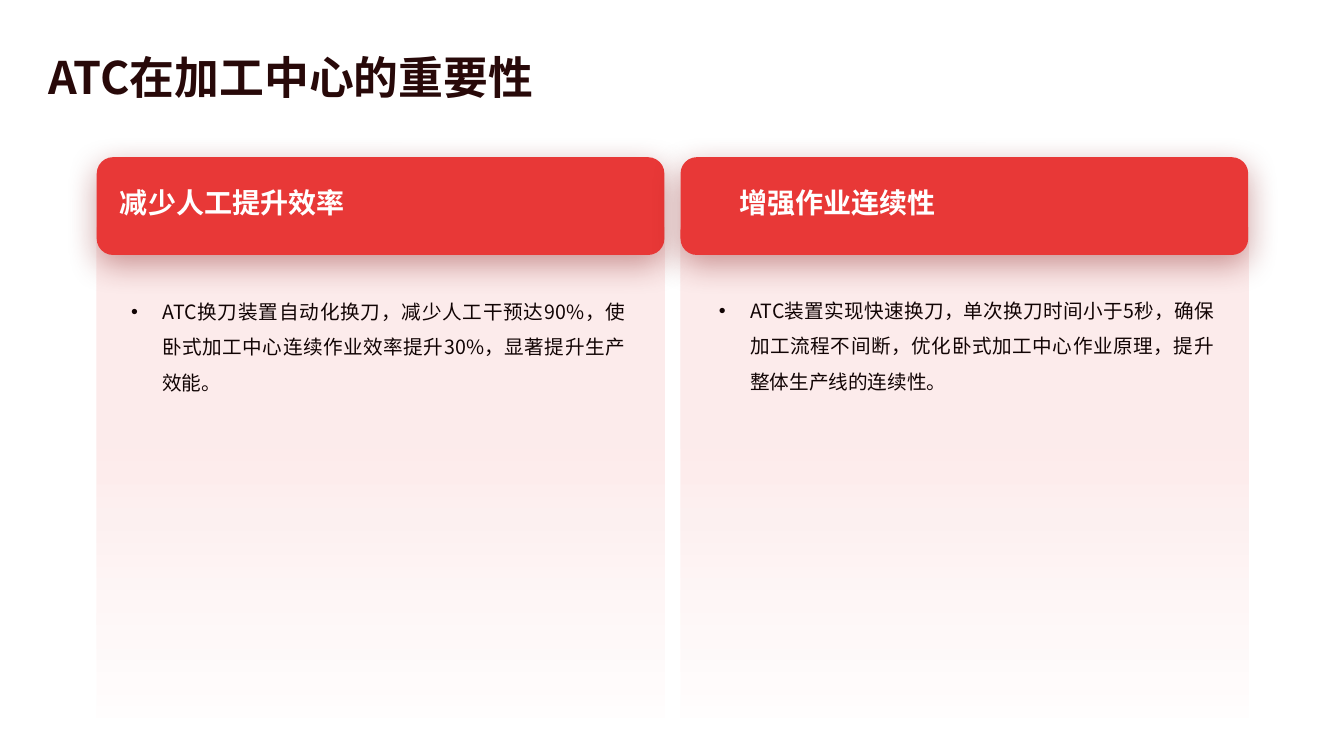
from lxml.etree import SubElement
from pptx import Presentation
from pptx.dml.color import RGBColor
from pptx.enum.lang import MSO_LANGUAGE_ID
from pptx.enum.shapes import MSO_SHAPE
from pptx.enum.text import MSO_ANCHOR, MSO_AUTO_SIZE, PP_ALIGN
from pptx.oxml.ns import qn
from pptx.util import Inches, Pt

FONT = "Noto Sans CJK SC"
COLORS = {
    "red": "E83837",
    "shade": "810F0F",
    "white": "FFFFFF",
    "title": "280909",
    "body": "110404",
}
WIDTH = 5.63
CARDS = [
    {
        "left": 0.96,
        "head": "减少人工提升效率",
        "head_box": (1.09, 1.76, 4.95, 0.5),
        "body": "ATC换刀装置自动化换刀，减少人工干预达90%，使卧式加工中心连续作业效率提升30%，显著提升生产效能。",
        "body_box": (1.2, 2.81, 5.1, 3.77),
    },
    {
        "left": 6.75,
        "head": "增强作业连续性",
        "head_box": (7.23, 1.76, 4.95, 0.5),
        "body": "ATC装置实现快速换刀，单次换刀时间小于5秒，确保加工流程不间断，优化卧式加工中心作业原理，提升整体生产线的连续性。",
        "body_box": (7.03, 2.8, 5.11, 3.77),
    },
]


def color(name):
    return RGBColor.from_string(COLORS[name])


def add_box(slide, left, top, height):
    box = slide.shapes.add_shape(
        MSO_SHAPE.ROUNDED_RECTANGLE,
        Inches(left), Inches(top), Inches(WIDTH), Inches(height),
    )
    box.shadow.inherit = False
    box.line.fill.background()
    return box


def add_panel(slide, left):
    panel = add_box(slide, left, 2.26, 4.92)
    panel.adjustments[0] = 0
    panel.fill.gradient()
    panel.fill.gradient_angle = 270
    for stop, place in zip(panel.fill.gradient_stops, (0.4, 1)):
        stop.position = place
        stop.color.rgb = color("red")
    tints = panel._element.spPr.iter(qn("a:srgbClr"))
    for tint, alpha in zip(list(tints), (10, 0)):
        SubElement(tint, qn("a:alpha"), val=str(alpha * 1000))


def add_band(slide, left):
    band = add_box(slide, left, 1.56, 0.97)
    band.fill.solid()
    band.fill.fore_color.rgb = color("red")
    effects = band._element.spPr.find(qn("a:effectLst"))
    shadow = SubElement(
        effects, qn("a:outerShdw"), blurRad=str(Pt(23)), dist=str(Pt(7)),
        dir="5400000", algn="t", rotWithShape="0",
    )
    tint = SubElement(shadow, qn("a:srgbClr"), val=COLORS["shade"])
    SubElement(tint, qn("a:alpha"), val="40000")


def set_bullet(para):
    props = para._p.get_or_add_pPr()
    indent = Inches(0.31)
    props.set("marL", str(indent))
    props.set("indent", str(-indent))
    SubElement(props, qn("a:buFont"), typeface="Arial")
    SubElement(props, qn("a:buChar"), char="•")


def put_text(holder, text, box, size, ink, bold=False, align=PP_ALIGN.LEFT,
             anchor=MSO_ANCHOR.MIDDLE, line=1, gap=0, bullet=False):
    holder.left, holder.top, holder.width, holder.height = map(Inches, box)
    frame = holder.text_frame
    frame.word_wrap = True
    frame.auto_size = MSO_AUTO_SIZE.NONE
    frame.vertical_anchor = anchor
    para = frame.paragraphs[0]
    para.alignment = align
    para.line_spacing = line
    para.space_before = para.space_after = Pt(gap)
    if bullet:
        set_bullet(para)
    run = para.add_run()
    run.text = text
    font = run.font
    font.name = FONT
    font.size = Pt(size)
    font.bold = bold
    font.color.rgb = color(ink)
    font.language_id = MSO_LANGUAGE_ID.SIMPLIFIED_CHINESE
    SubElement(run._r.get_or_add_rPr(), qn("a:ea"), typeface=FONT)
    holder._element.getparent().append(holder._element)


def main():
    deck = Presentation()
    deck.slide_width = Inches(13.33)
    deck.slide_height = Inches(7.5)
    slide = deck.slides.add_slide(deck.slide_layouts.get_by_name("Comparison"))
    title, *slots = list(slide.placeholders)

    for card in CARDS:
        add_panel(slide, card["left"])
    for card in CARDS:
        add_band(slide, card["left"])
    for card, head, body in zip(CARDS, slots[::2], slots[1::2]):
        put_text(head, card["head"], card["head_box"], 20, "white", bold=True)
        put_text(body, card["body"], card["body_box"], 14, "body",
                 align=PP_ALIGN.JUSTIFY, anchor=MSO_ANCHOR.TOP,
                 line=1.5, gap=3, bullet=True)
    put_text(title, "ATC在加工中心的重要性", (0.38, 0.31, 12.57, 0.79),
             32, "title", bold=True, line=1.2)
    deck.save("out.pptx")


if __name__ == "__main__":
    main()
